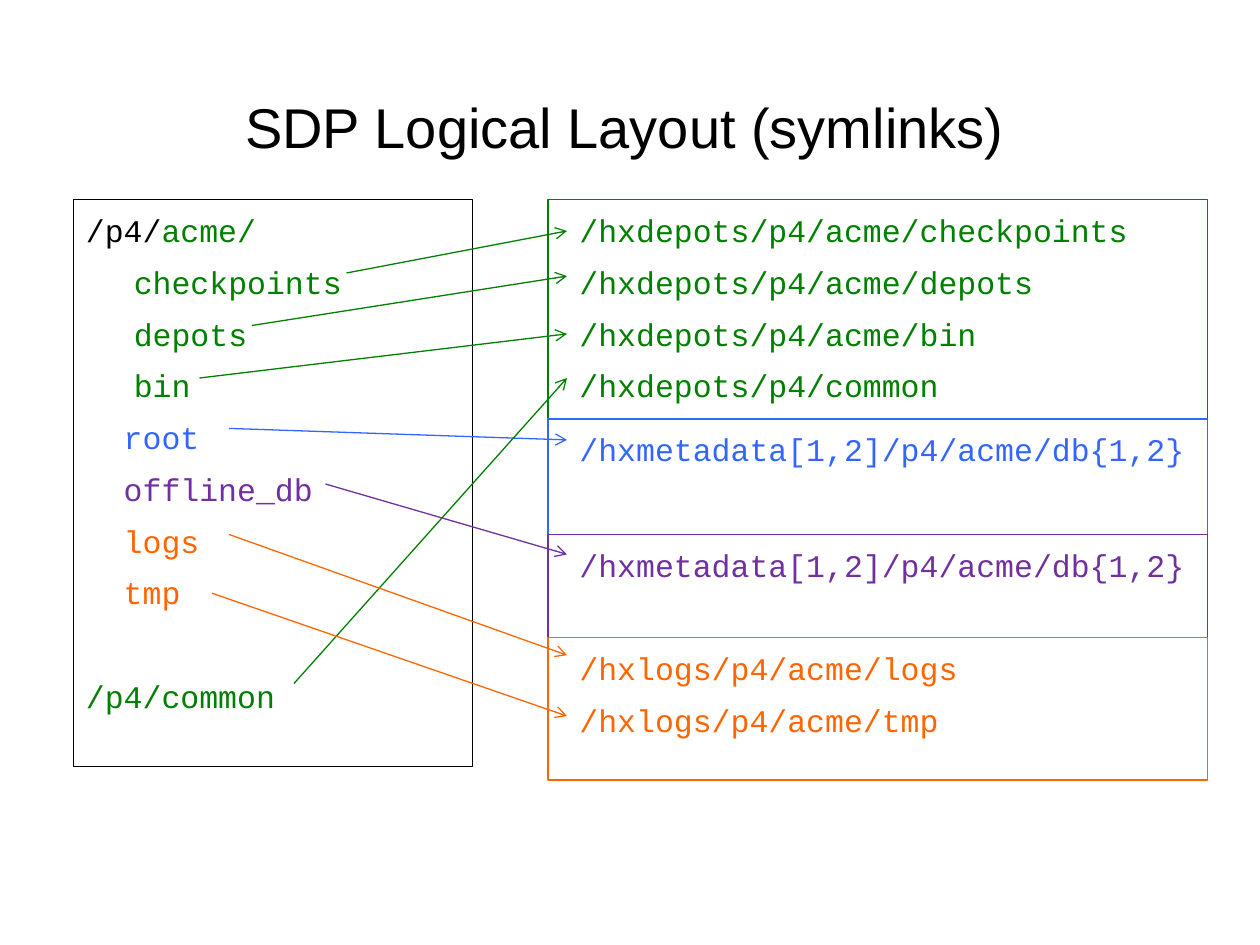
from lxml.etree import SubElement
from pptx import Presentation
from pptx.dml.color import RGBColor
from pptx.enum.shapes import MSO_CONNECTOR as Connector, MSO_SHAPE as Shape
from pptx.enum.text import MSO_ANCHOR as Anchor, PP_ALIGN as Align
from pptx.oxml.ns import qn
from pptx.util import Inches, Pt

BLACK, GREEN, BLUE = "000000", "008000", "3366FF"
PURPLE, ORANGE = "7030A0", "FF6600"
MONO = "Courier New"
LINE_HEIGHT, LINE_GAP = 24.6, 5
CHAR = 0.15  # width of one 18 pt monospace character, in inches
TAB = 0.38


def grid(units):
    """The page is 120 columns by 90 rows, each a twelfth of an inch."""
    return Inches(units / 12)


def color(value):
    return RGBColor.from_string(value)


def add_span(para, text, tint, size, font):
    span = para.add_run()
    span.text = text
    for name, value in {"size": Pt(size), "name": font}.items():
        setattr(span.font, name, value)
    span.font.color.rgb = color(tint)


def add_title(page, area, text):
    box = page.shapes.add_textbox(*map(grid, area))
    frame = box.text_frame
    frame.word_wrap = True
    frame.vertical_anchor = Anchor.MIDDLE
    para = frame.paragraphs[0]
    para.alignment = Align.CENTER
    add_span(para, text, BLACK, 32, "Arial")


def add_listing(page, area, outline, lines):
    """Outlined box of paths; each line is (indent, blank lines above, spans)."""
    box = page.shapes.add_shape(Shape.RECTANGLE, *map(grid, area))
    box.shadow.inherit = False
    box.fill.background()
    box.line.color.rgb = color(outline)
    box.line.width = Pt(0.75)
    frame = box.text_frame
    frame.word_wrap = True
    frame.vertical_anchor = Anchor.TOP
    for index, (indent, skipped, spans) in enumerate(lines):
        para = frame.add_paragraph() if index else frame.paragraphs[0]
        layout = {
            "alignment": Align.LEFT,
            "line_spacing": Pt(LINE_HEIGHT),
            "space_before": Pt(skipped * (LINE_HEIGHT + LINE_GAP)),
            "space_after": Pt(LINE_GAP),
        }
        for name, value in layout.items():
            setattr(para, name, value)
        para._p.get_or_add_pPr().set("marL", str(Inches(indent)))
        for text, tint in spans:
            add_span(para, text, tint, 18, MONO)


def add_link_tree(page, area):
    entries = [(TAB, name, GREEN) for name in ("checkpoints", "depots", "bin")]
    entries += [(2 * CHAR, name, tint) for name, tint in (
        ("root", BLUE), ("offline_db", PURPLE), ("logs", ORANGE), ("tmp", ORANGE))]
    lines = [(0, 0, [("/p4/", BLACK), ("acme/", GREEN)])]
    lines += [(indent, 0, [(name, tint)]) for indent, name, tint in entries]
    lines.append((0, 1, [("/p4/common", GREEN)]))
    add_listing(page, area, BLACK, lines)


def add_targets(page, area):
    """Stack of volume boxes, whose heights are given in rows."""
    left, top, width, height = area
    metadata = "/hxmetadata[1,2]/p4/acme/db{1,2}"
    depots = ["/hxdepots/p4/" + name for name in
              ("acme/checkpoints", "acme/depots", "acme/bin", "common")]
    volumes = [
        (GREEN, 20.9, depots),
        (BLUE, 11, [metadata]),
        (PURPLE, 9.8, [metadata]),
        (ORANGE, 13.6, ["/hxlogs/p4/acme/logs", "/hxlogs/p4/acme/tmp"]),
    ]
    unit = height / sum(rows for _, rows, _ in volumes)
    for tint, rows, targets in volumes:
        lines = [(CHAR, 0, [(target, tint)]) for target in targets]
        add_listing(page, (left, top, width, rows * unit), tint, lines)
        top += rows * unit


def add_symlinks(page, end_column, links):
    for tint, column, row, end_row in links:
        arrow = page.shapes.add_connector(
            Connector.STRAIGHT, *map(grid, (column, row, end_column, end_row)))
        arrow.line.color.rgb = color(tint)
        arrow.line.width = Pt(0.75)
        SubElement(arrow.line._get_or_add_ln(), qn("a:tailEnd"), type="arrow")
        SubElement(arrow._element.spPr, qn("a:effectLst"))


def main():
    deck = Presentation()
    deck.slide_width, deck.slide_height = grid(120), grid(90)
    page = deck.slides.add_slide(deck.slide_layouts[6])

    add_title(page, (4, 8, 111, 8), "SDP Logical Layout (symlinks)")
    add_targets(page, (52.2, 19, 62.8, 55.3))
    add_link_tree(page, (7, 19, 38, 54))

    # Each symlink: colour, start column, start row, end row
    add_symlinks(page, 54, [
        (GREEN, 33, 26, 22),
        (GREEN, 24, 31, 26.3),
        (GREEN, 19, 36, 31.8),
        (BLUE, 21.8, 40.8, 41.9),
        (GREEN, 28, 65.1, 36),
        (ORANGE, 21.8, 50.9, 62.4),
        (PURPLE, 31, 46.1, 52.8),
        (ORANGE, 20.2, 56.5, 68.2),
    ])
    deck.save("out.pptx")


if __name__ == "__main__":
    main()
